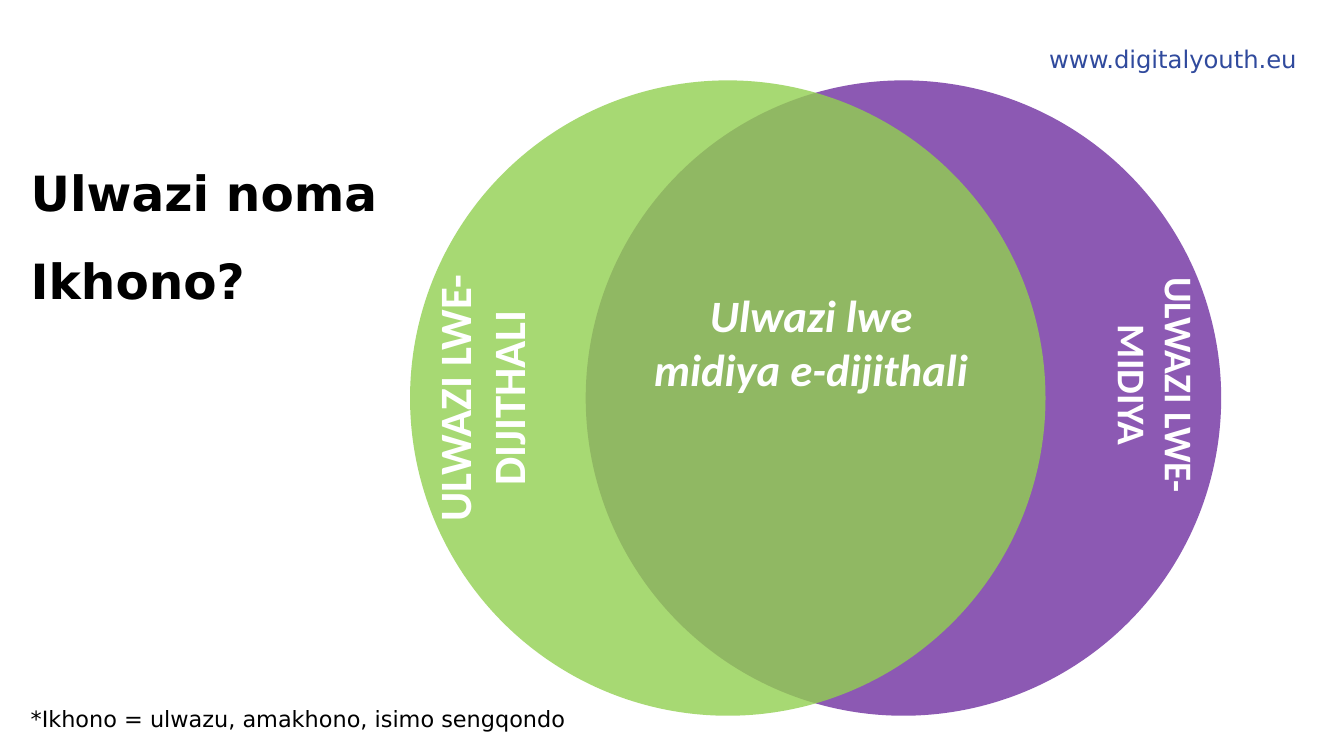
from dataclasses import dataclass

import lxml.etree
import pptx
import pptx.dml.color
import pptx.enum.shapes
import pptx.enum.text
import pptx.oxml.ns
import pptx.util

Cm = pptx.util.Cm
ALIGN = pptx.enum.text.PP_ALIGN


@dataclass(frozen=True)
class Theme:
    green: str = "92D050"
    purple: str = "7030A0"
    blue: str = "304A9D"
    black: str = "000000"
    white: str = "FFFFFF"
    alpha: int = 80
    sans: str = "DejaVu Sans"
    round: str = "Calibri"
    title: int = 26
    large: int = 24
    label: int = 21
    link: int = 13
    note: int = 12


THEME = Theme()


@dataclass(frozen=True)
class Disc:
    left: float
    color: str
    top: float = 1.52
    size: float = 12.01


@dataclass(frozen=True)
class Label:
    text: str
    left: float
    top: float
    width: float
    height: float
    size: int
    color: str = THEME.white
    font: str = THEME.round
    bold: bool = True
    slant: bool = False
    align: ALIGN = ALIGN.CENTER
    turn: int = 0
    lines: float = 1.0
    inset: float = 0.13


DISCS = (Disc(11.07, THEME.purple), Disc(7.75, THEME.green))

LABELS = (
    Label("www.digitalyouth.eu", 19.58, 0.58, 6.15, 1.07, THEME.link,
          THEME.blue, THEME.sans, bold=False, align=ALIGN.LEFT, inset=0.25),
    Label("ULWAZI LWE-MIDIYA", 18.39, 5.72, 5.87, 3.12, THEME.label, turn=90),
    Label("ULWAZI LWE-DIJITHALI", 6.27, 5.77, 6.83, 3.51, THEME.large, turn=270),
    Label("Ulwazi lwe midiya e-dijithali", 12.09, 5.31, 6.48, 5.18,
          THEME.large, slant=True),
    Label("Ulwazi noma Ikhono?", 0.33, 2.41, 7.9, 3.84, THEME.title,
          THEME.black, THEME.sans, align=ALIGN.LEFT, lines=1.5),
    Label("*Ikhono = ulwazu, amakhono, isimo sengqondo", 0.33, 12.95, 11.28,
          1.14, THEME.note, THEME.black, THEME.sans, bold=False,
          align=ALIGN.LEFT, lines=1.5),
)


def tint(color: str) -> pptx.dml.color.RGBColor:
    return pptx.dml.color.RGBColor.from_string(color)


def draw_disc(slide, disc: Disc) -> None:
    shape = slide.shapes.add_shape(
        pptx.enum.shapes.MSO_SHAPE.OVAL,
        Cm(disc.left), Cm(disc.top), Cm(disc.size), Cm(disc.size))
    shape.shadow.inherit = False
    shape.line.fill.background()
    shape.fill.solid()
    shape.fill.fore_color.rgb = tint(disc.color)
    qn = pptx.oxml.ns.qn
    color = shape._element.spPr.find(qn("a:solidFill")).find(qn("a:srgbClr"))
    lxml.etree.SubElement(color, qn("a:alpha"), val=str(THEME.alpha * 1000))


def draw_label(slide, label: Label) -> None:
    box = slide.shapes.add_textbox(
        Cm(label.left), Cm(label.top), Cm(label.width), Cm(label.height))
    box.rotation = label.turn
    frame = box.text_frame
    frame.word_wrap = True
    frame.margin_left = frame.margin_right = Cm(0.25)
    frame.margin_top = frame.margin_bottom = Cm(label.inset)
    para = frame.paragraphs[0]
    para.alignment = label.align
    para.line_spacing = label.lines
    run = para.add_run()
    run.text = label.text
    font = run.font
    font.name = label.font
    font.size = pptx.util.Pt(label.size)
    font.bold = label.bold
    font.italic = label.slant
    font.color.rgb = tint(label.color)


def main() -> None:
    deck = pptx.Presentation()
    deck.slide_width = Cm(25.4)
    deck.slide_height = Cm(14.29)
    slide = deck.slides.add_slide(deck.slide_layouts[6])
    for disc in DISCS:
        draw_disc(slide, disc)
    for label in LABELS:
        draw_label(slide, label)
    deck.save("out.pptx")


if __name__ == "__main__":
    main()
